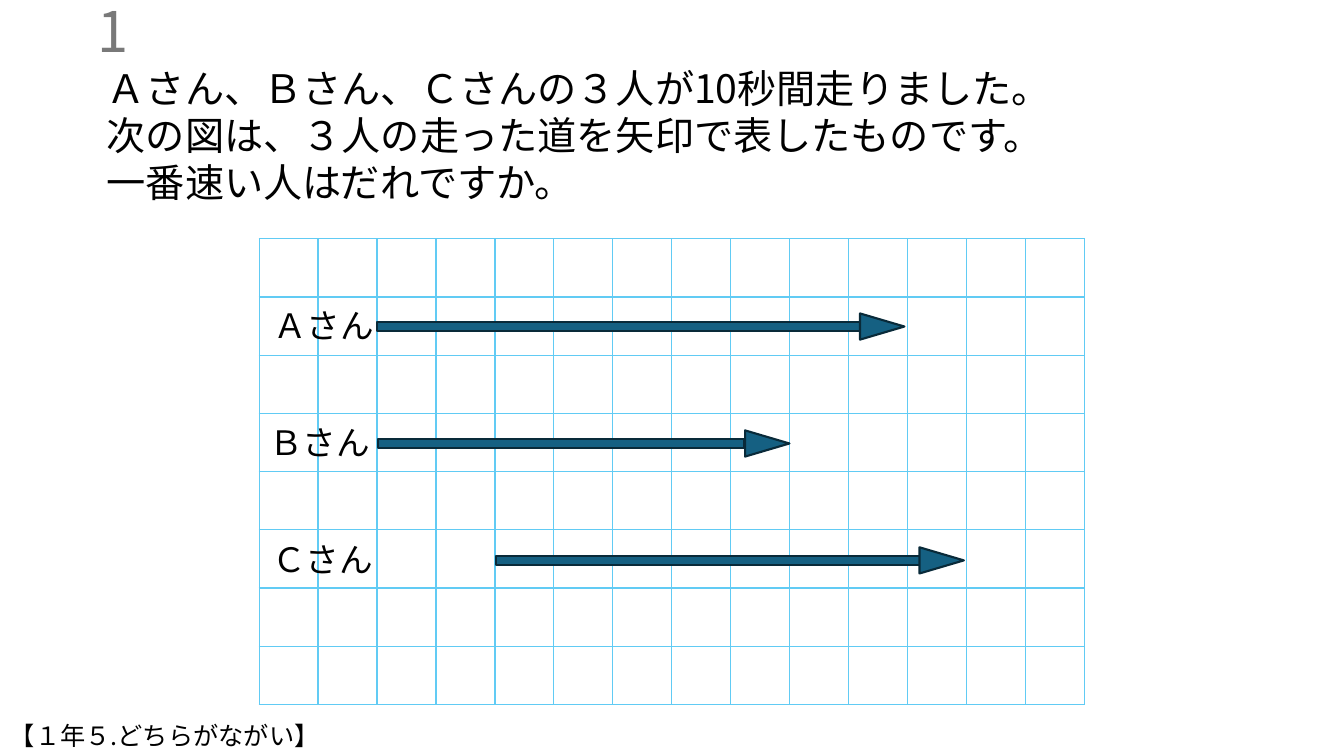
from lxml import etree
from pptx import Presentation
from pptx.dml.color import RGBColor
from pptx.enum.shapes import MSO_SHAPE as Preset
from pptx.enum.text import MSO_ANCHOR as Anchor, MSO_AUTO_SIZE as AutoSize, PP_ALIGN as Align
from pptx.oxml.ns import qn
from pptx.util import Inches, Pt

FONT = "Noto Sans CJK JP"
COLORS = {"text": "000000", "number": "797979", "grid": "61CBF4",
          "arrow": "156082", "outline": "092A39"}
HEAD_LENGTH, HEAD_WIDTH, SHAFT_WIDTH = 0.44, 0.26, 0.09
FIRST_LANE, LANE_GAP = 3.24, 1.16

QUESTION = ["Ａさん、Ｂさん、Ｃさんの３人が10秒間走りました。",
            "次の図は、３人の走った道を矢印で表したものです。",
            "一番速い人はだれですか。"]
# name, label left, shaft left, shaft length, arrow tip
RUNNERS = [("Ａさん", 2.61, 3.74, 4.79, 8.97),
           ("Ｂさん", 2.57, 3.75, 3.63, 7.83),
           ("Ｃさん", 2.6, 4.92, 4.33, 9.56)]


def color(name):
    return RGBColor.from_string(COLORS[name])


class Worksheet:
    """Holds the current slide and the style of its elements."""

    def __init__(self, slide):
        self.slide = slide
        self.shapes = slide.shapes

    def add_lines(self, frame, lines, size, ink="text", align=Align.LEFT):
        for index, line in enumerate(lines):
            paragraph = frame.paragraphs[0] if index == 0 else frame.add_paragraph()
            paragraph.alignment = align
            run = paragraph.add_run()
            run.text = line
            run.font.size = Pt(size)
            run.font.name = FONT
            run.font.color.rgb = color(ink)
            east_asian = etree.SubElement(run.font._element, qn("a:ea"))
            east_asian.set("typeface", FONT)

    def title(self, lines, left, top, width, height, size):
        heading = self.shapes.title
        heading.left, heading.top = Inches(left), Inches(top)
        heading.width, heading.height = Inches(width), Inches(height)
        frame = heading.text_frame
        frame.word_wrap = True
        frame.auto_size = AutoSize.NONE
        frame.vertical_anchor = Anchor.TOP
        self.add_lines(frame, lines, size)

    def text(self, line, left, top, width, height, size, wrap=True,
             anchor=Anchor.TOP, **style):
        box = self.shapes.add_textbox(Inches(left), Inches(top), Inches(width), Inches(height))
        frame = box.text_frame
        frame.word_wrap = wrap
        frame.vertical_anchor = anchor
        self.add_lines(frame, [line], size, **style)

    def grid(self, rows, columns, left, top, width, height):
        table = self.shapes.add_table(rows, columns, Inches(left), Inches(top),
                                      Inches(width), Inches(height)).table
        table.first_row = table.horz_banding = False
        for cell in table.iter_cells():
            self.border(cell)
            cell.fill.background()

    def border(self, cell):
        properties = cell._tc.get_or_add_tcPr()
        for side in ("lnL", "lnR", "lnT", "lnB"):
            line = etree.SubElement(properties, qn(f"a:{side}"), w=str(Pt(1)))
            fill = etree.SubElement(line, qn("a:solidFill"))
            etree.SubElement(fill, qn("a:srgbClr"), val=COLORS["grid"])

    def block(self, preset, center_x, center_y, width, height, rotation=0):
        shape = self.shapes.add_shape(preset, Inches(center_x - width / 2),
                                      Inches(center_y - height / 2),
                                      Inches(width), Inches(height))
        shape.rotation = rotation
        shape.shadow.inherit = False
        shape.fill.solid()
        shape.fill.fore_color.rgb = color("arrow")
        shape.line.color.rgb = color("outline")
        shape.line.width = Pt(1.5)

    def arrow(self, left, length, tip, center_y):
        """Draw a shaft and a head, a triangle turned to point right."""
        self.block(Preset.RECTANGLE, left + length / 2, center_y, length, SHAFT_WIDTH)
        self.block(Preset.ISOSCELES_TRIANGLE, tip - HEAD_LENGTH / 2, center_y,
                   HEAD_WIDTH, HEAD_LENGTH, rotation=90)


def main():
    deck = Presentation()
    deck.slide_width, deck.slide_height = Inches(13.33), Inches(7.5)
    sheet = Worksheet(deck.slides.add_slide(deck.slide_layouts[5]))

    sheet.title(QUESTION, 0.96, 0.59, 11.53, 1.51, size=28)
    sheet.text("1", -1.63, 0.1, 3, 0.4, size=40, anchor=Anchor.MIDDLE,
               ink="number", align=Align.RIGHT)
    sheet.grid(8, 14, 2.57, 2.37, 8.19, 4.62)
    for lane, (name, label_left, left, length, tip) in enumerate(RUNNERS):
        center_y = FIRST_LANE + lane * LANE_GAP
        sheet.arrow(left, length, tip, center_y)
        sheet.text(name, label_left, center_y - 0.26, 1.21, 0.5, size=24, wrap=False)
    sheet.text("【１年５.どちらがながい】", 0, 7.1, 7.49, 0.4, size=18)

    deck.save("out.pptx")


if __name__ == "__main__":
    main()
